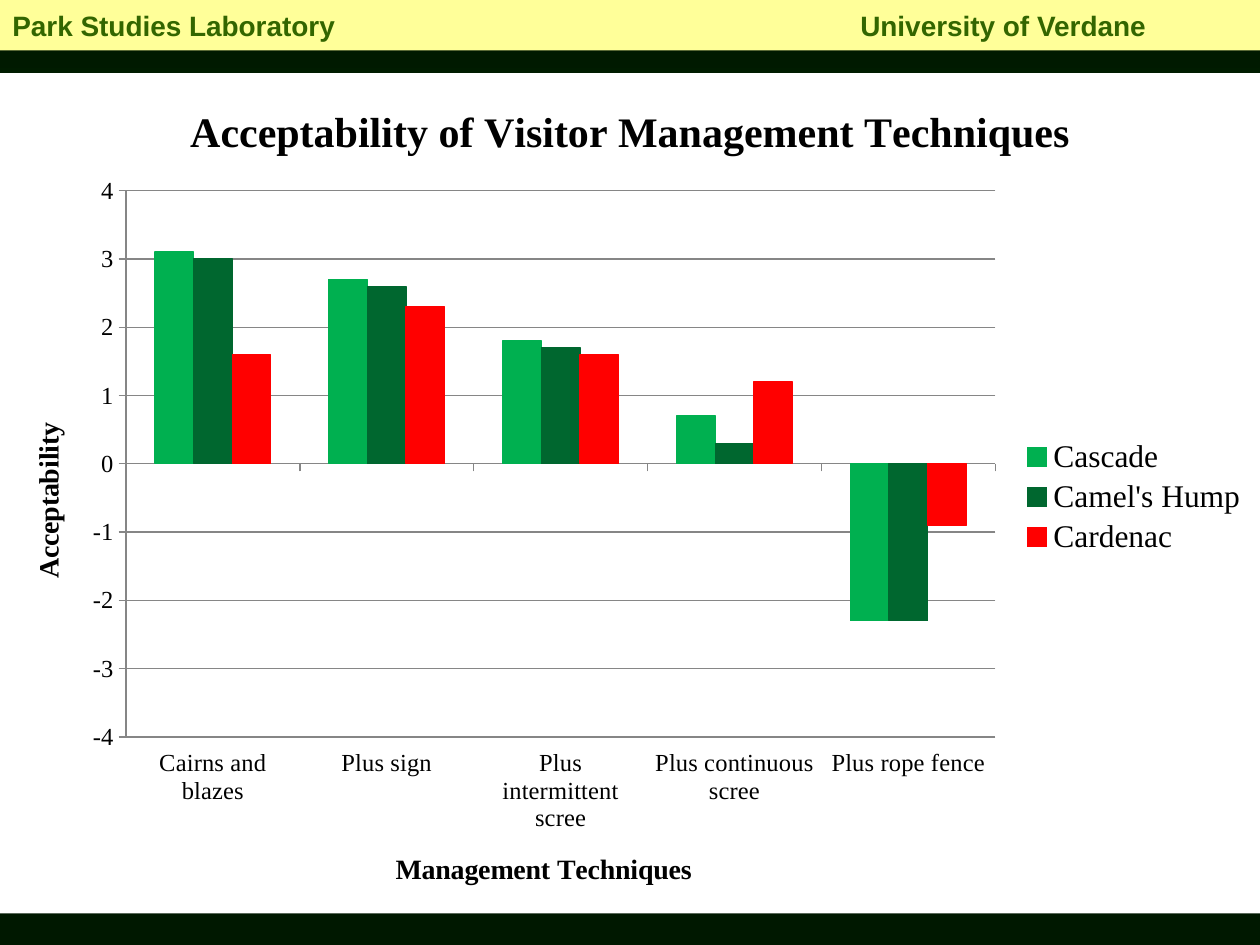
import copy

import lxml.etree
import pptx
import pptx.chart.data
import pptx.dml.color
import pptx.enum.chart
import pptx.enum.shapes
import pptx.enum.text
import pptx.oxml
import pptx.oxml.ns
import pptx.util

Inches, Pt = pptx.util.Inches, pptx.util.Pt
RGBColor = pptx.dml.color.RGBColor
qn = pptx.oxml.ns.qn

BLACK = RGBColor(0x00, 0x00, 0x00)
WHITE = RGBColor(0xFF, 0xFF, 0xFF)
GRAY = RGBColor(0x86, 0x86, 0x86)
CREAM = RGBColor(0xFF, 0xFF, 0x99)
LEAF = RGBColor(0x33, 0x66, 0x00)
FOREST = RGBColor(0x00, 0x33, 0x00)
NIGHT = RGBColor(0x00, 0x18, 0x00)

LABORATORY, UNIVERSITY = "Park Studies Laboratory", "University of Verdane"
HEADING = "Acceptability of Visitor Management Techniques"
TECHNIQUES = ["Cairns and blazes", "Plus sign", "Plus intermittent scree",
              "Plus continuous scree", "Plus rope fence"]
PARKS = [
    ("Cascade", RGBColor(0x00, 0xB0, 0x50), [3.1, 2.7, 1.8, 0.7, -2.3]),
    ("Camel's Hump", RGBColor(0x00, 0x67, 0x2F), [3, 2.6, 1.7, 0.3, -2.3]),
    ("Cardenac", RGBColor(0xFF, 0x00, 0x00), [1.6, 2.3, 1.6, 1.2, -0.9]),
]


def write_text(paragraph, text, *, size, font="Times New Roman", color=BLACK):
    run = paragraph.add_run()
    run.text = text
    run.font.size = Pt(size)
    run.font.name = font
    run.font.bold = True
    run.font.color.rgb = color


def place(element, index, **fractions):
    for old in element.findall(qn("c:layout")):
        element.remove(old)
    layout = lxml.etree.Element(qn("c:layout"))
    manual = lxml.etree.SubElement(layout, qn("c:manualLayout"))
    if element.tag == qn("c:plotArea"):
        lxml.etree.SubElement(manual, qn("c:layoutTarget"), val="inner")
    for mode in ("xMode", "yMode"):
        lxml.etree.SubElement(manual, qn(f"c:{mode}"), val="edge")
    for side, fraction in fractions.items():
        lxml.etree.SubElement(manual, qn(f"c:{side}"), val=str(fraction))
    element.insert(index, layout)


def paint_background(slide):
    fill = slide.background.fill
    fill.gradient()
    fill.gradient_angle = 90
    first, last = fill.gradient_stops
    first.color.rgb = last.color.rgb = FOREST
    first.position, last.position = 0, 1
    stops = slide.background._cSld.find(".//" + qn("a:gsLst"))
    middle = copy.deepcopy(stops[0])
    middle.set("pos", "50000")
    stops.insert(1, middle)
    first.color.rgb = last.color.rgb = NIGHT


def style_axis(axis, title, **position):
    axis.has_title = True
    write_text(axis.axis_title.text_frame.paragraphs[0], title, size=16)
    place(axis.axis_title._element, 1, **position)
    axis.tick_labels.font.size = Pt(14)
    axis.major_tick_mark = pptx.enum.chart.XL_TICK_MARK.OUTSIDE
    axis.format.line.color.rgb = GRAY


def add_acceptability_chart(slide):
    ratings = pptx.chart.data.CategoryChartData()
    ratings.categories = TECHNIQUES
    for park, _, scores in PARKS:
        ratings.add_series(park, scores)
    chart = slide.shapes.add_chart(
        pptx.enum.chart.XL_CHART_TYPE.COLUMN_CLUSTERED,
        Inches(0), Inches(0.58), Inches(10), Inches(6.67), ratings).chart
    chart.font.name = "Times New Roman"
    chart.font.size = Pt(10)
    chart.font.color.rgb = BLACK

    chart.has_title = True
    write_text(chart.chart_title.text_frame.paragraphs[0], HEADING, size=24)
    chart.chart_title.include_in_layout = False

    style_axis(chart.category_axis, "Management Techniques", x=0.31, y=0.92)
    style_axis(chart.value_axis, "Acceptability", x=0.02, y=0.41)
    chart.category_axis.tick_label_position = pptx.enum.chart.XL_TICK_LABEL_POSITION.LOW
    chart.value_axis.minimum_scale = -4
    chart.value_axis.maximum_scale = 4
    chart.value_axis.major_unit = 1
    chart.value_axis.major_gridlines.format.line.color.rgb = GRAY

    chart.has_legend = True
    chart.legend.position = pptx.enum.chart.XL_LEGEND_POSITION.RIGHT
    chart.legend.include_in_layout = False
    chart.legend.font.size = Pt(18)
    place(chart.legend._element, 1, x=0.81, y=0.43, w=0.18, h=0.15)

    plot = chart.plots[0]
    plot.gap_width = 150
    plot.overlap = 0
    plot.vary_by_categories = False
    for series, (_, color, _) in zip(plot.series, PARKS):
        series.invert_if_negative = False
        series.format.fill.solid()
        series.format.fill.fore_color.rgb = color
        series.format.line.color.rgb = color
        series.format.line.width = Pt(0.75)

    space = chart._chartSpace
    place(space.chart.plotArea, 0, x=0.1, y=0.14, w=0.69, h=0.65)
    backdrop = pptx.oxml.parse_xml(
        f'<c:spPr xmlns:c="{pptx.oxml.ns.nsuri("c")}" xmlns:a="{pptx.oxml.ns.nsuri("a")}">'
        f'<a:solidFill><a:srgbClr val="{WHITE}"/></a:solidFill>'
        '<a:ln><a:noFill/></a:ln></c:spPr>')
    space.chart.addnext(backdrop)


def add_header(slide):
    header = slide.shapes.add_shape(
        pptx.enum.shapes.MSO_SHAPE.RECTANGLE,
        Inches(0), Inches(0), Inches(10), Inches(0.4))
    header.shadow.inherit = False
    header.fill.solid()
    header.fill.fore_color.rgb = CREAM
    header.line.fill.background()
    header.text_frame.word_wrap = True
    header.text_frame.vertical_anchor = pptx.enum.text.MSO_ANCHOR.MIDDLE
    names = header.text_frame.paragraphs[0]
    names.alignment = pptx.enum.text.PP_ALIGN.LEFT
    write_text(names, f"{LABORATORY}\t{UNIVERSITY}", size=16, font="Arial", color=LEAF)
    tabs = lxml.etree.SubElement(names._p.get_or_add_pPr(), qn("a:tabLst"))
    lxml.etree.SubElement(tabs, qn("a:tab"), pos=str(Inches(6.73)), algn="l")


def main():
    deck = pptx.Presentation()
    deck.slide_width, deck.slide_height = Inches(10), Inches(7.5)
    slide = deck.slides.add_slide(deck.slide_layouts[6])
    paint_background(slide)
    add_acceptability_chart(slide)
    add_header(slide)
    deck.save("out.pptx")


if __name__ == "__main__":
    main()
